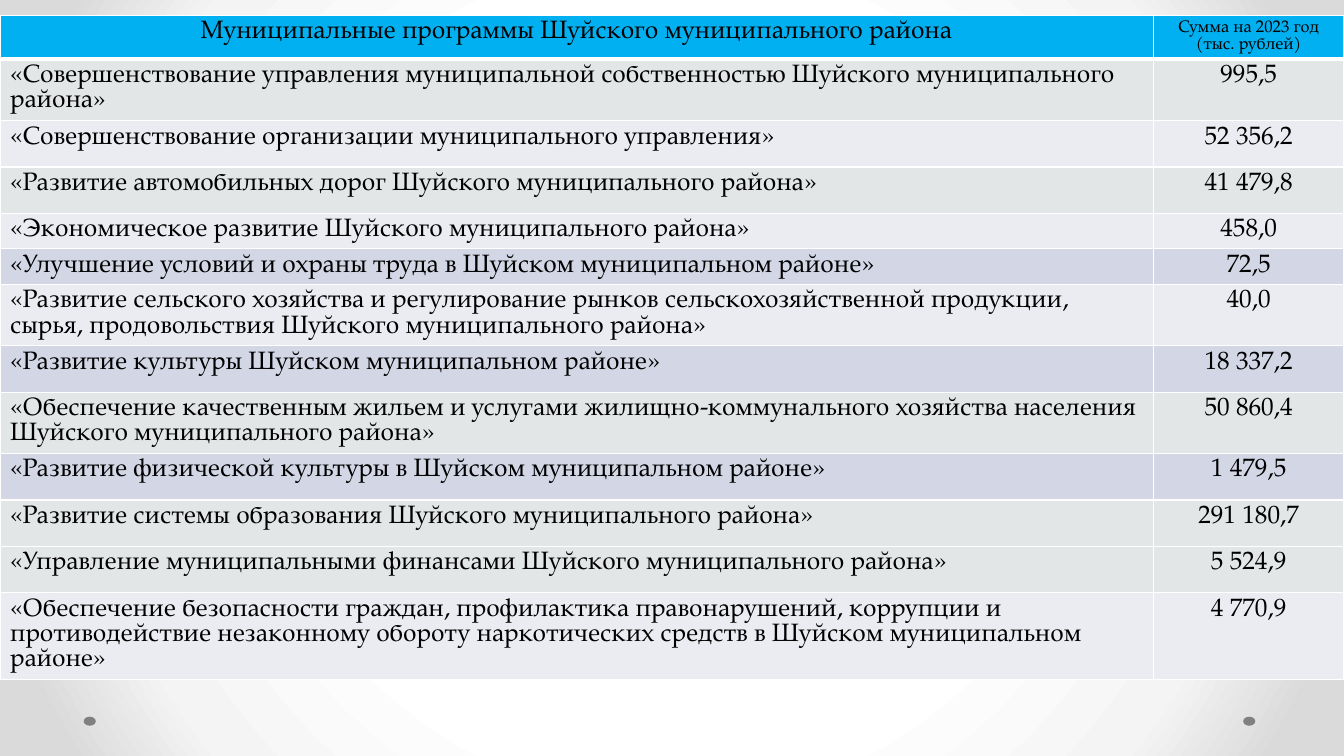
from pptx import Presentation
from pptx.dml.color import RGBColor
from pptx.enum.shapes import MSO_SHAPE
from pptx.enum.text import PP_ALIGN
from pptx.oxml import parse_xml
from pptx.oxml.ns import nsdecls
from pptx.util import Inches, Pt

FONT = "TeX Gyre Pagella"
COLORS = {
    "header": "00B0F0",
    "gray": "E3E6E7",
    "light": "EAECF2",
    "blue": "D2D6E5",
    "text": "000000",
    "border": "FFFFFF",
    "dot": "808080",
}
BACKGROUND_STOPS = [(50, "FFFFFF"), (76, "F4F4F4"), (92, "DADADA")]
COLUMN_WIDTHS = [11.44, 1.89]
HEADER = ["Муниципальные программы Шуйского муниципального района",
          "Сумма на 2023 год (тыс. рублей)"]
HEADER_HEIGHT = 0.43
PROGRAMS = [
    ("«Совершенствование управления муниципальной собственностью Шуйского муниципального района»",
     "995,5", "gray", 0.61),
    ("«Совершенствование организации муниципального управления»",
     "52 356,2", "light", 0.46),
    ("«Развитие автомобильных дорог Шуйского муниципального района»",
     "41 479,8", "gray", 0.46),
    ("«Экономическое развитие Шуйского муниципального района»",
     "458,0", "light", 0.35),
    ("«Улучшение условий и охраны труда в Шуйском муниципальном районе»",
     "72,5", "blue", 0.35),
    ("«Развитие сельского хозяйства и регулирование рынков сельскохозяйственной продукции, "
     "сырья, продовольствия Шуйского муниципального района»",
     "40,0", "light", 0.61),
    ("«Развитие культуры Шуйском муниципальном районе»",
     "18 337,2", "blue", 0.46),
    ("«Обеспечение качественным жильем и услугами жилищно-коммунального хозяйства населения "
     "Шуйского муниципального района»",
     "50 860,4", "gray", 0.61),
    ("«Развитие физической культуры в Шуйском муниципальном районе»",
     "1 479,5", "blue", 0.46),
    ("«Развитие системы образования Шуйского муниципального района»",
     "291 180,7", "gray", 0.46),
    ("«Управление муниципальными финансами Шуйского муниципального района»",
     "5 524,9", "gray", 0.46),
    ("«Обеспечение безопасности граждан, профилактика правонарушений, коррупции и "
     "противодействие незаконному обороту наркотических средств в Шуйском муниципальном районе»",
     "4 770,9", "light", 0.86),
]


def set_background(slide):
    """Fill the slide with a circular gradient."""
    stops = "".join(
        f'<a:gs pos="{pos * 1000}"><a:srgbClr val="{color}"/></a:gs>'
        for pos, color in BACKGROUND_STOPS)
    bg = parse_xml(
        f'<p:bg {nsdecls("p", "a")}><p:bgPr><a:gradFill rotWithShape="1">'
        f'<a:gsLst>{stops}</a:gsLst><a:path path="circle">'
        '<a:fillToRect l="50000" t="50000" r="50000" b="50000"/></a:path>'
        '</a:gradFill><a:effectLst/></p:bgPr></p:bg>')
    slide.element.cSld.insert(0, bg)


def add_dot(slide, left):
    """Add a small footer ellipse."""
    sp = slide.shapes.add_shape(MSO_SHAPE.OVAL, Inches(left), Inches(7.11),
                                Inches(0.12), Inches(0.09))
    sp.shadow.inherit = False
    sp.fill.solid()
    sp.fill.fore_color.rgb = RGBColor.from_string(COLORS["dot"])
    sp.line.fill.background()


def add_text(tf, text, size=18, align=PP_ALIGN.LEFT, color="text"):
    """Write one formatted paragraph into a text frame."""
    p = tf.paragraphs[0]
    p.alignment = align
    r = p.add_run()
    r.text = text
    r.font.name = FONT
    r.font.size = Pt(size)
    r.font.bold = False
    r.font.color.rgb = RGBColor.from_string(COLORS[color])


def set_borders(cell, bottom=1):
    """Draw white lines on the four sides of a cell."""
    tcPr = cell._tc.get_or_add_tcPr()
    widths = {"lnL": 1, "lnR": 1, "lnT": 1, "lnB": bottom}
    for i, (side, width) in enumerate(widths.items()):
        tcPr.insert(i, parse_xml(
            f'<a:{side} {nsdecls("a")} w="{Pt(width)}"><a:solidFill>'
            f'<a:srgbClr val="{COLORS["border"]}"/></a:solidFill></a:{side}>'))


def fill_cell(cell, text, fill, bottom=1, **text_format):
    """Set the fill, borders and text of a cell."""
    cell.fill.solid()
    cell.fill.fore_color.rgb = RGBColor.from_string(COLORS[fill])
    set_borders(cell, bottom)
    add_text(cell.text_frame, text, **text_format)


def add_program_table(slide):
    """Add the table of programs and sums."""
    heights = [HEADER_HEIGHT] + [height for *_, height in PROGRAMS]
    table = slide.shapes.add_table(
        len(heights), len(COLUMN_WIDTHS), Inches(0), Inches(0.15),
        Inches(sum(COLUMN_WIDTHS)), Inches(sum(heights))).table
    table.first_row = table.horz_banding = False
    for column, width in zip(table.columns, COLUMN_WIDTHS):
        column.width = Inches(width)
    for row, height in zip(table.rows, heights):
        row.height = Inches(height)
    for col, (title, size) in enumerate(zip(HEADER, (18, 12))):
        fill_cell(table.cell(0, col), title, "header", bottom=3,
                  size=size, align=PP_ALIGN.CENTER)
    for row, (name, amount, fill, _) in enumerate(PROGRAMS, start=1):
        fill_cell(table.cell(row, 0), name, fill)
        fill_cell(table.cell(row, 1), amount, fill, align=PP_ALIGN.CENTER)


def main():
    """Build and save the slide."""
    prs = Presentation()
    prs.slide_width = Inches(13.33)
    prs.slide_height = Inches(7.5)
    slide = prs.slides.add_slide(prs.slide_layouts[6])
    set_background(slide)
    for left in (12.33, 0.83):
        add_dot(slide, left)
    add_program_table(slide)
    prs.save("out.pptx")


if __name__ == "__main__":
    main()
